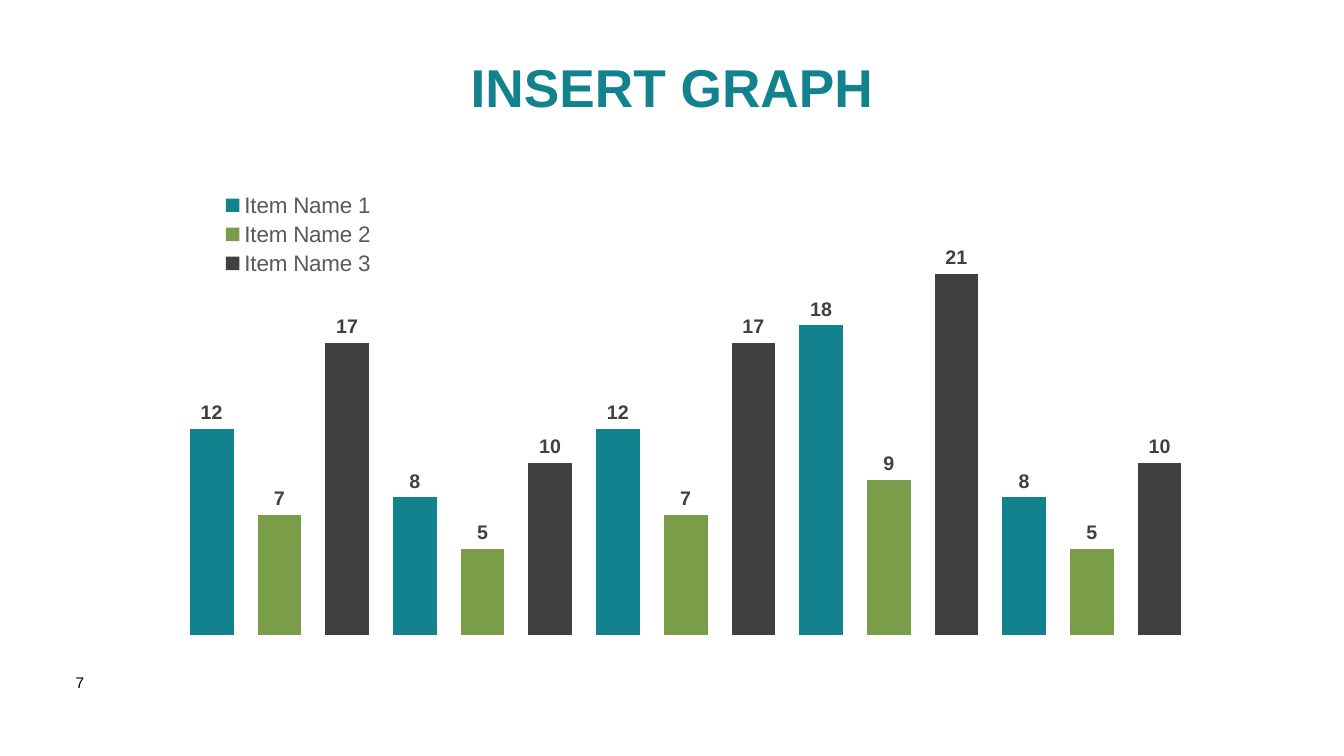
"""Build a slide with a stacked column chart of three repeating items."""
from dataclasses import dataclass

from lxml.etree import SubElement
from pptx import Presentation
from pptx.chart.data import CategoryChartData
from pptx.dml.color import RGBColor as Rgb
from pptx.enum.chart import XL_CHART_TYPE as ChartType
from pptx.enum.chart import XL_LABEL_POSITION as LabelPos
from pptx.enum.chart import XL_LEGEND_POSITION as LegendPos
from pptx.enum.text import MSO_ANCHOR as Anchor
from pptx.enum.text import MSO_AUTO_SIZE as AutoSize
from pptx.enum.text import PP_ALIGN as Align
from pptx.oxml.ns import qn
from pptx.util import Inches, Pt


@dataclass(frozen=True)
class Theme:
    font: str = "Arial"
    teal: str = "12828E"
    green: str = "799D49"
    charcoal: str = "404041"
    label: str = "404040"
    legend: str = "595959"
    black: str = "000000"
    title_size: int = 38
    legend_size: int = 16
    label_size: int = 14
    number_size: int = 11
    chart_size: int = 10


THEME = Theme()
WIDTH, HEIGHT = Inches(13.33), Inches(7.5)
LEFT_MARGIN = 0.049
LABEL_LIFT = -0.061
ITEMS = ("Item Name 1", "Item Name 2", "Item Name 3")
COLORS = (THEME.teal, THEME.green, THEME.charcoal)
GROUPS = ((12, 7, 17), (8, 5, 10), (12, 7, 17), (18, 9, 21), (8, 5, 10))


def share(left, top, width, height):
    return (round(WIDTH * left), round(HEIGHT * top),
            round(WIDTH * width), round(HEIGHT * height))


def style_font(font, size, color, bold=False):
    font.name, font.size, font.bold = THEME.font, Pt(size), bold
    font.color.rgb = Rgb.from_string(color)


def write(shape, text, size, color, bold=False, align=Align.LEFT, anchor=Anchor.TOP):
    frame = shape.text_frame
    frame.text = text
    frame.word_wrap, frame.auto_size = True, AutoSize.NONE
    frame.vertical_anchor = anchor
    line = frame.paragraphs[0]
    line.alignment = align
    style_font(line.runs[0].font, size, color, bold)


def set_layout(parent, index, **settings):
    """Give a chart part a manual layout at its place among the children."""
    for old in parent.findall(qn("c:layout")):
        parent.remove(old)
    layout = SubElement(parent, qn("c:layout"))
    manual = SubElement(layout, qn("c:manualLayout"))
    for name, value in settings.items():
        SubElement(manual, qn(f"c:{name}")).set("val", str(value))
    parent.insert(index, layout)


def item_values(item):
    return [value if place == item else None
            for group in GROUPS for place, value in enumerate(group)]


def label_columns(series, values):
    """Lift a bold value label above each filled column."""
    for index, value in enumerate(values):
        if value is not None:
            label = series.points[index].data_label
            style_font(label.font, THEME.label_size, THEME.label, bold=True)
            label.position = LabelPos.INSIDE_END
    for label in series._element.iter(qn("c:dLbl")):
        set_layout(label, 1, x=0, y=LABEL_LIFT)


def add_legend(chart):
    chart.has_legend = True
    legend = chart.legend
    legend.position = LegendPos.RIGHT
    legend.include_in_layout = False
    style_font(legend.font, THEME.legend_size, THEME.legend)
    set_layout(legend._element, 1, xMode="edge", yMode="edge",
               x=0.125, y=0.08, w=0.14, h=0.18)


def add_item_chart(slide):
    data = CategoryChartData()
    data.categories = [str(n + 1) for n in range(len(GROUPS) * len(ITEMS))]
    back_to_front = list(reversed(range(len(ITEMS))))
    for item in back_to_front:
        data.add_series(ITEMS[item], item_values(item))
    chart = slide.shapes.add_chart(
        ChartType.COLUMN_STACKED, *share(LEFT_MARGIN, 0.195, 0.887, 0.676), data).chart
    chart.has_title = False
    style_font(chart.font, THEME.chart_size, THEME.black)
    chart.category_axis.visible = chart.value_axis.visible = False
    chart.value_axis.has_major_gridlines = False
    chart.value_axis.minimum_scale, chart.value_axis.maximum_scale = 0, 25
    plot = chart.plots[0]
    plot.gap_width, plot.overlap, plot.vary_by_categories = 55, 100, False
    for item, series in zip(back_to_front, plot.series):
        series.format.fill.solid()
        series.format.fill.fore_color.rgb = Rgb.from_string(COLORS[item])
        label_columns(series, item_values(item))
    add_legend(chart)
    plot_area = chart._chartSpace.find(f".//{qn('c:plotArea')}")
    set_layout(plot_area, 0, layoutTarget="inner", xMode="edge", yMode="edge",
               x=0.094, y=0.113, w=0.852, h=0.841)


def add_title(slide, text):
    title = slide.shapes.title
    title.left, title.top, title.width, title.height = share(0.186, 0.07, 0.628, 0.089)
    write(title, text, THEME.title_size, THEME.teal, bold=True,
          align=Align.CENTER, anchor=Anchor.MIDDLE)


def add_page_number(slide, number):
    box = slide.shapes.add_textbox(*share(LEFT_MARGIN, 0.884, 0.044, 0.072))
    write(box, number, THEME.number_size, THEME.black)


def main():
    deck = Presentation()
    deck.slide_width, deck.slide_height = WIDTH, HEIGHT
    slide = deck.slides.add_slide(deck.slide_layouts.get_by_name("Title Only"))
    add_page_number(slide, "7")
    add_item_chart(slide)
    add_title(slide, "INSERT GRAPH")
    deck.save("out.pptx")


if __name__ == "__main__":
    main()
